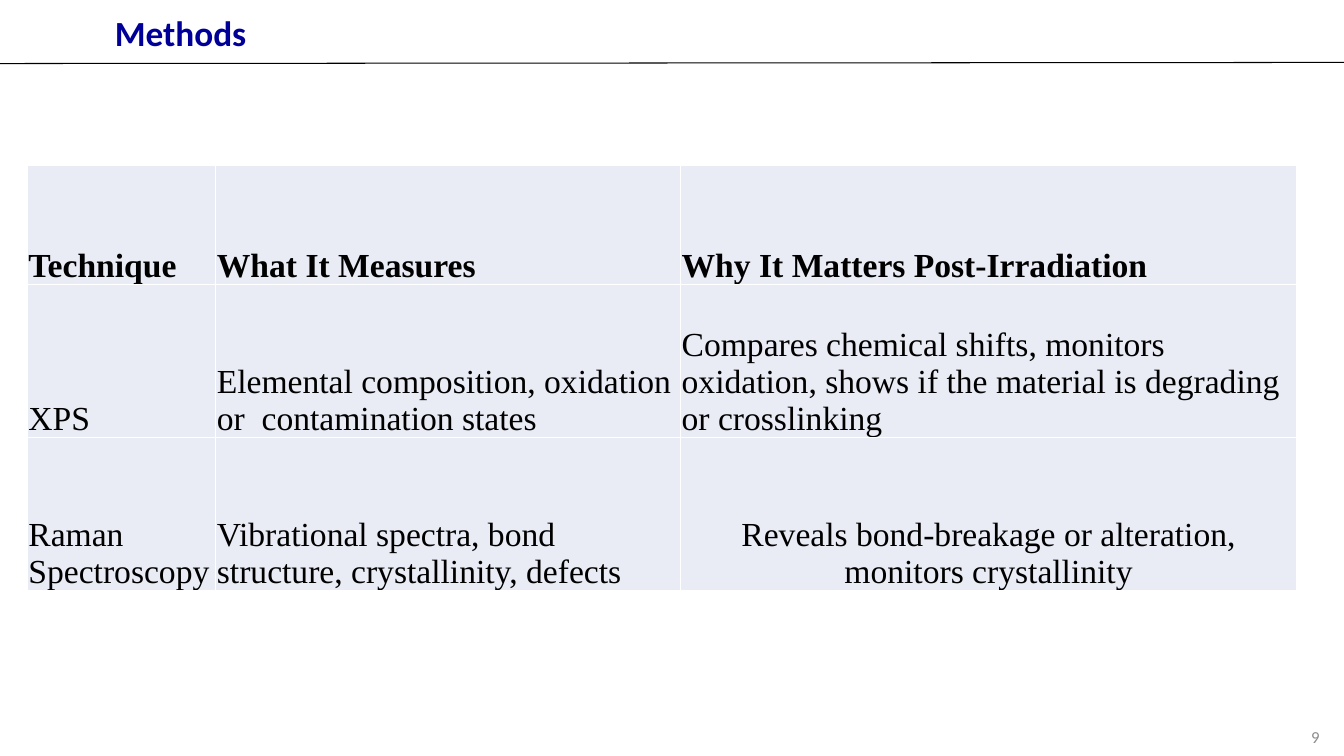
from lxml import etree
from pptx import Presentation
from pptx import util as u
from pptx.dml.color import RGBColor
from pptx.enum import shapes, text
from pptx.oxml import ns

BLACK = RGBColor(0x00, 0x00, 0x00)
NAVY = RGBColor(0x00, 0x00, 0x99)
GREY = RGBColor(0x8C, 0x8C, 0x8C)
WHITE = RGBColor(0xFF, 0xFF, 0xFF)
LAVENDER = RGBColor(0xE9, 0xEB, 0xF5)

LEFT, CENTER, RIGHT = text.PP_ALIGN.LEFT, text.PP_ALIGN.CENTER, text.PP_ALIGN.RIGHT

COLUMN_WIDTHS = [134.6, 332, 440]
ROW_HEIGHTS = [85, 109.4, 109.4]
TECHNIQUES = [
    ["Technique", "What It Measures", "Why It Matters Post‑Irradiation"],
    ["XPS", "Elemental composition, oxidation or  contamination states",
     "Compares chemical shifts, monitors oxidation, "
     "shows if the material is degrading or crosslinking"],
    ["Raman Spectroscopy", "Vibrational spectra, bond structure, crystallinity, defects",
     "Reveals bond-breakage or alteration, monitors crystallinity"],
]


def write(tf, words, size, color, font="Calibri", bold=False, align=LEFT, spacing=None):
    tf.word_wrap = True
    p = tf.paragraphs[0]
    p.alignment = align
    p.line_spacing = spacing
    r = p.add_run()
    r.text = words
    r.font.name = font
    r.font.size = u.Pt(size)
    r.font.bold = bold
    r.font.color.rgb = color


class Deck:
    def __init__(self):
        self.prs = Presentation()
        self.prs.slide_width, self.prs.slide_height = u.Pt(960), u.Pt(540)
        self.s = self.prs.slides.add_slide(self.prs.slide_layouts[6])

    def rule(self, x1, y1, x2, y2, color=BLACK, width=0.75):
        sp = self.s.shapes.add_connector(
            shapes.MSO_CONNECTOR.STRAIGHT, u.Pt(x1), u.Pt(y1), u.Pt(x2), u.Pt(y2))
        sp.line.color.rgb = color
        sp.line.width = u.Pt(width)
        etree.SubElement(sp._element.spPr, ns.qn("a:effectLst"))

    def label(self, x, y, w, h, words, **style):
        sp = self.s.shapes.add_textbox(u.Pt(x), u.Pt(y), u.Pt(w), u.Pt(h))
        sp.text_frame.vertical_anchor = text.MSO_ANCHOR.MIDDLE
        write(sp.text_frame, words, **style)

    def table(self, x, y, widths, heights, rows):
        frame = self.s.shapes.add_table(len(heights), len(widths), u.Pt(x), u.Pt(y),
                                        u.Pt(sum(widths)), u.Pt(sum(heights)))
        table = frame.table
        table.first_row = table.horz_banding = False
        for column, width in zip(table.columns, widths):
            column.width = u.Pt(width)
        for row, height in zip(table.rows, heights):
            row.height = u.Pt(height)
        for i, row in enumerate(rows):
            for j, words in enumerate(row):
                last = i == len(rows) - 1 and j == len(row) - 1
                self.cell(table.cell(i, j), words, bold=i == 0,
                          align=CENTER if last else LEFT)

    def cell(self, cell, words, **style):
        cell.margin_left = cell.margin_right = cell.margin_top = u.Pt(0.75)
        cell.margin_bottom = 0
        cell.vertical_anchor = text.MSO_ANCHOR.BOTTOM
        self.borders(cell)
        cell.fill.solid()
        cell.fill.fore_color.rgb = LAVENDER
        write(cell.text_frame, words, size=24, color=BLACK,
              font="Times New Roman", **style)

    def borders(self, cell, color=WHITE, width=1):
        tcPr = cell._tc.get_or_add_tcPr()
        for side in ("lnL", "lnR", "lnT", "lnB"):
            ln = etree.SubElement(tcPr, ns.qn("a:" + side), w=str(u.Pt(width)))
            fill = etree.SubElement(ln, ns.qn("a:solidFill"))
            etree.SubElement(fill, ns.qn("a:srgbClr"), val=str(color))


def main():
    deck = Deck()
    deck.rule(0, 45.4, 960, 44.6)
    deck.label(75, 10, 818.6, 30.2, "Methods", size=25.2, color=NAVY, bold=True, spacing=0.9)
    deck.label(733.7, 512, 216, 28.8, "9", size=12, color=GREY, align=RIGHT)
    deck.table(19.6, 118.2, COLUMN_WIDTHS, ROW_HEIGHTS, TECHNIQUES)
    deck.prs.save("out.pptx")


if __name__ == "__main__":
    main()
